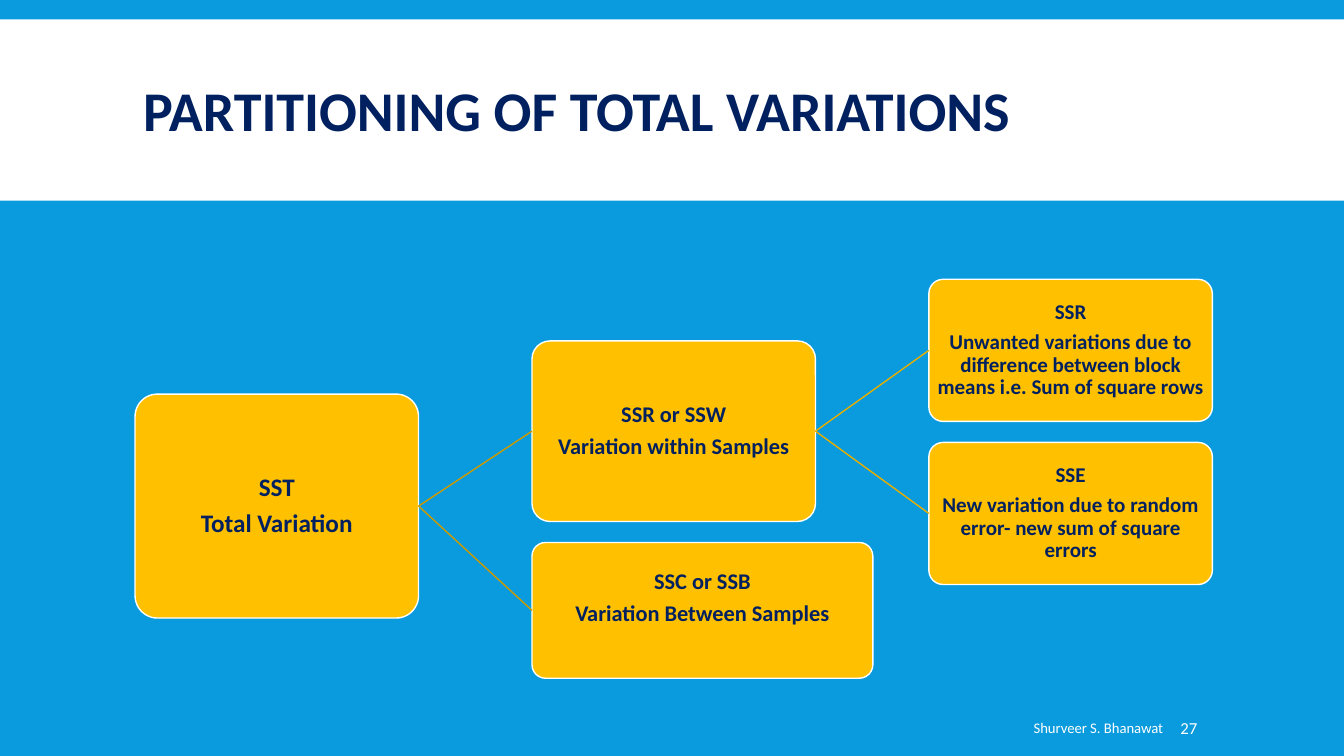
from dataclasses import dataclass

from lxml import etree
from pptx import Presentation
from pptx.dml.color import RGBColor
from pptx.enum.shapes import MSO_CONNECTOR, MSO_SHAPE
from pptx.enum.text import MSO_ANCHOR, PP_ALIGN
from pptx.oxml.ns import qn
from pptx.util import Pt

ROUNDED = MSO_SHAPE.ROUNDED_RECTANGLE
RECTANGLE = MSO_SHAPE.RECTANGLE
STRAIGHT = MSO_CONNECTOR.STRAIGHT
MIDDLE = MSO_ANCHOR.MIDDLE
LEFT, CENTER, RIGHT = PP_ALIGN.LEFT, PP_ALIGN.CENTER, PP_ALIGN.RIGHT
TITLE_ONLY = 5


@dataclass(frozen=True)
class Theme:
    font: str = "Calibri"
    sky: str = "099BDD"
    white: str = "FFFFFF"
    navy: str = "002060"
    gold: str = "FFC000"
    link_first: str = "CC9A00"
    link_second: str = "E7AE00"
    title_size: float = 40
    level_sizes: tuple = (18, 16, 15)
    author_size: float = 10.5
    number_size: float = 12


THEME = Theme()


@dataclass(frozen=True)
class Node:
    lines: tuple
    width: float
    height: float
    bottom_inset: float = 1


NODE_WIDTH = 202.5
COLUMN_PITCH = 283.5
STACK_GAP = 15
COLUMNS = (
    (82, (Node(("SST", "Total Variation"), NODE_WIDTH, 160),)),
    (44, (
        Node(("SSR or SSW", "Variation within Samples"), NODE_WIDTH, 129),
        Node(("SSC or SSB", "Variation Between Samples"), 243.5, 97, 18),
    )),
    (0, (
        Node(("SSR", "Unwanted variations due to difference between block "
              "means i.e. Sum of square rows"), NODE_WIDTH, 101.5),
        Node(("SSE", "New variation due to random error- new sum of square "
              "errors"), NODE_WIDTH, 101.5),
    )),
)


def color(value):
    return RGBColor.from_string(value)


def write_text(shape, lines, size, fill, bold=False, align=LEFT,
               spacing=1.0, after=0, insets=(7.2, 3.6, 7.2, 3.6)):
    frame = shape.text_frame
    frame.word_wrap = True
    frame.vertical_anchor = MIDDLE
    (frame.margin_left, frame.margin_top,
     frame.margin_right, frame.margin_bottom) = map(Pt, insets)
    for index, line in enumerate(lines):
        para = frame.add_paragraph() if index else frame.paragraphs[0]
        para.alignment = align
        para.line_spacing = spacing
        para.space_before = Pt(0)
        para.space_after = Pt(after)
        span = para.add_run()
        span.text = line
        span.font.name = THEME.font
        span.font.size = Pt(size)
        span.font.bold = bold
        span.font.color.rgb = color(fill)


def add_panel(page, kind, box, fill):
    panel = page.shapes.add_shape(kind, *map(Pt, box))
    panel.shadow.inherit = False
    panel.fill.solid()
    panel.fill.fore_color.rgb = color(fill)
    panel.line.fill.background()
    return panel


def add_header(page, box):
    left, top, width, height = box
    band = add_panel(page, RECTANGLE, box, THEME.white)
    title = page.shapes.title
    title.element.addprevious(band.element)
    title.left, title.top = Pt(left + 95), Pt(top + 8.5)
    title.width, title.height = Pt(width - 190), Pt(height - 11)
    write_text(title, ["PARTITIONING OF TOTAL VARIATIONS"], THEME.title_size,
               THEME.navy, bold=True, spacing=0.85)


def add_node(page, node, left, top, size):
    shape = add_panel(page, ROUNDED, (left, top, node.width, node.height),
                      THEME.gold)
    shape.adjustments[0] = 0.1
    shape.line.color.rgb = color(THEME.white)
    shape.line.width = Pt(1)
    write_text(shape, node.lines, size, THEME.navy, bold=True, align=CENTER,
               spacing=0.9, after=0.35 * size,
               insets=(1, 1, 1, node.bottom_inset))
    return shape


def link(page, parent, child, stroke):
    line = page.shapes.add_connector(STRAIGHT, 0, 0, 0, 0)
    line.begin_connect(parent, 3)
    line.end_connect(child, 1)
    line.line.color.rgb = color(stroke)
    line.line.width = Pt(1)
    etree.SubElement(line.element.spPr, qn("a:effectLst"))


def add_tree(page, box):
    left, top = box
    parent = None
    strokes = (None, THEME.link_first, THEME.link_second)
    for level, (offset, nodes) in enumerate(COLUMNS):
        node_top = top + offset
        shapes = []
        for node in nodes:
            shapes.append(add_node(page, node, left + level * COLUMN_PITCH,
                                   node_top, THEME.level_sizes[level]))
            node_top += node.height + STACK_GAP
        if parent is not None:
            for child in shapes:
                link(page, parent, child, strokes[level])
        parent = shapes[0]


def add_footer(page, box):
    left, top, width, height = box
    number_width = 74
    author = page.shapes.add_textbox(
        Pt(left), Pt(top), Pt(width - number_width - 1.5), Pt(height))
    write_text(author, ["Shurveer S. Bhanawat"], THEME.author_size,
               THEME.white, align=RIGHT)
    number = page.shapes.add_textbox(
        Pt(left + width - number_width), Pt(top), Pt(number_width), Pt(height))
    write_text(number, ["27"], THEME.number_size, THEME.white,
               insets=(3.6, 3.6, 7.2, 3.6))


def main():
    deck = Presentation()
    deck.slide_width, deck.slide_height = Pt(960), Pt(540)
    page = deck.slides.add_slide(deck.slide_layouts[TITLE_ONLY])
    page.background.fill.solid()
    page.background.fill.fore_color.rgb = color(THEME.sky)
    add_header(page, (0, 13.8, 960, 129.6))
    add_tree(page, (96.5, 199.5))
    add_footer(page, (440.5, 505.5, 473, 29))
    deck.save("out.pptx")


if __name__ == "__main__":
    main()
